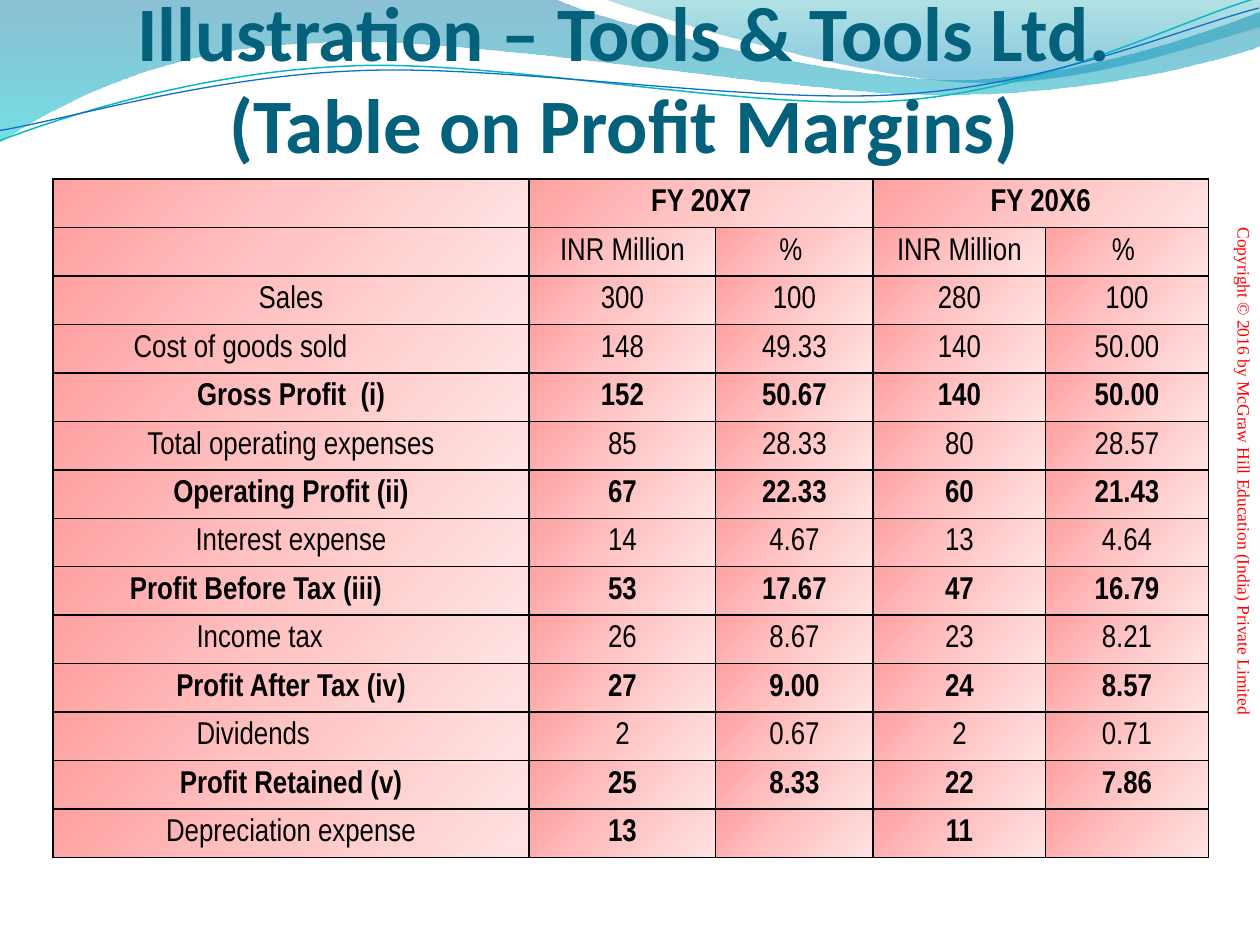
from lxml import etree
from pptx import Presentation
from pptx.dml.color import RGBColor
from pptx.enum.text import MSO_ANCHOR, MSO_AUTO_SIZE, PP_ALIGN
from pptx.oxml.ns import qn
from pptx.util import Inches, Pt

CENTER = PP_ALIGN.CENTER
BOTTOM, MIDDLE = MSO_ANCHOR.BOTTOM, MSO_ANCHOR.MIDDLE
NO_AUTOFIT = MSO_AUTO_SIZE.NONE
COLORS = {
    "title": "04617B", "copyright": "FF0000", "text": "000000",
    "blue": "0074A1", "cyan": "00C6CF", "teal": "00A1A9", "sky": "008BBF",
    "teal line": "0AB8BF", "blue line": "0F6FC6",
    "rose": "FFA0A0", "pink": "FFC5C5", "blush": "FFE3E3",
}


def set_gradient(filled, properties, stops, angle):
    filled.fill.background()
    gradient = etree.Element(qn("a:gradFill"), rotWithShape="1")
    stop_list = etree.SubElement(gradient, qn("a:gsLst"))
    for position, color, opacity in stops:
        stop = etree.SubElement(stop_list, qn("a:gs"), pos=str(position * 1000))
        value = etree.SubElement(stop, qn("a:srgbClr"), val=COLORS[color])
        if opacity < 100:
            etree.SubElement(value, qn("a:alpha"), val=str(opacity * 1000))
    etree.SubElement(gradient, qn("a:lin"), ang=str(angle * 60000), scaled="0")
    properties.replace(properties.find(qn("a:noFill")), gradient)


def add_wave(shapes, start, segments, closed):
    builder = shapes.build_freeform(Inches(start[0]), Inches(start[1]))
    builder.add_line_segments(
        [(Inches(x), Inches(y)) for segment in segments for x, y in segment], close=closed)
    wave = builder.convert_to_shape()
    wave.shadow.inherit = False
    outline = wave.element.find(".//" + qn("a:path"))
    lines = iter(outline.findall(qn("a:lnTo")))
    for segment in segments:
        group = [next(lines) for point in segment]
        if len(group) == 3:
            curve = etree.Element(qn("a:cubicBezTo"))
            group[0].addprevious(curve)
            for line in group:
                curve.append(line[0])
                outline.remove(line)
    return wave


presentation = Presentation()
presentation.slide_width = Inches(10)
presentation.slide_height = Inches(7.5)
slide = presentation.slides.add_slide(presentation.slide_layouts[5])
shapes = slide.shapes

filled_waves = [
    ((0, 0), [
        [(4.4, -0.01)],
        [(4.76, 0.17), (6.64, 0.63), (7.58, 0.63)],
        [(8.53, 0.63), (9.58, 0.26), (10, 0.09)],
        [(10.01, 0.36)],
        [(9.83, 0.44), (8.7, 0.76), (7.46, 0.75)],
        [(6.22, 0.75), (3.82, 0.28), (2.57, 0.34)],
        [(1.29, 0.36), (0.46, 0.83), (-0.01, 1.13)],
        [(0, 0)],
    ], [(0, "blue", 45), (100, "cyan", 55)]),
    ((4.79, -0.01), [
        [(5.09, 0.11), (6.82, 0.62), (7.69, 0.65)],
        [(8.56, 0.69), (9.61, 0.32), (10, 0.21)],
        [(10, 0)],
        [(4.79, -0.01)],
    ], [(0, "teal", 30), (80, "sky", 45)]),
]
for start, segments, stops in filled_waves:
    wave = add_wave(shapes, start, segments, True)
    set_gradient(wave, wave.element.spPr, stops, 90)
    wave.line.fill.background()

line_waves = [
    ((-0.02, 0.88), [
        [(0.47, 0.72), (1.58, 0.41), (2.78, 0.42)],
        [(3.96, 0.42), (5.91, 0.93), (7.12, 0.9)],
        [(8.32, 0.87), (9.4, 0.36), (10, 0.22)],
    ], "teal line", 0.85),
    ((-0.02, 0.8), [
        [(0.46, 0.75), (1.64, 0.45), (2.83, 0.46)],
        [(4.03, 0.46), (5.96, 0.88), (7.16, 0.85)],
        [(8.35, 0.83), (9.42, 0.42), (10.01, 0.3)],
    ], "blue line", 0.75),
]
for start, segments, color, width in line_waves:
    wave = add_wave(shapes, start, segments, False)
    wave.rotation = 357.3
    wave.fill.background()
    wave.line.color.rgb = RGBColor.from_string(COLORS[color])
    wave.line.width = Pt(width)

copyright_box = shapes.add_textbox(Inches(6.83), Inches(3.49), Inches(6.33), Inches(0.5))
copyright_box.rotation = 90
copyright_frame = copyright_box.text_frame
copyright_frame.word_wrap = True
copyright_frame.vertical_anchor = BOTTOM
copyright_frame.text = "Copyright © 2016 by McGraw Hill Education (India) Private Limited"
paragraph = copyright_frame.paragraphs[0]
paragraph.alignment = CENTER
paragraph.font.name = "Times New Roman"
paragraph.font.size = Pt(10)
paragraph.font.color.rgb = RGBColor.from_string(COLORS["copyright"])

title = shapes.title
title.element.getparent().append(title.element)
title.left, title.top = Inches(0.58), Inches(0.17)
title.width, title.height = Inches(8.75), Inches(1.17)
title_frame = title.text_frame
title_frame.word_wrap = True
title_frame.auto_size = NO_AUTOFIT
title_frame.vertical_anchor = BOTTOM
title_frame.margin_left = title_frame.margin_right = title_frame.margin_bottom = 0
paragraph = title_frame.paragraphs[0]
paragraph.add_run().text = "Illustration – Tools & Tools Ltd."
paragraph.add_line_break()
paragraph.add_run().text = "(Table on Profit Margins)"
paragraph.alignment = CENTER
paragraph.font.name = "Calibri"
paragraph.font.size = Pt(44)
paragraph.font.bold = True
paragraph.font.color.rgb = RGBColor.from_string(COLORS["title"])

rows = [
    ("", "FY 20X7", "", "FY 20X6", ""),
    ("", "INR Million", "% ", "INR Million", "% "),
    ("Sales", "300", "100", "280", "100"),
    ("Cost of goods sold\t", "148", "49.33", "140", "50.00"),
    ("Gross Profit  (i)", "152", "50.67", "140", "50.00"),
    ("Total operating expenses", "85", "28.33", "80", "28.57"),
    ("Operating Profit (ii)", "67", "22.33", "60", "21.43"),
    ("Interest expense", "14", "4.67", "13", "4.64"),
    ("Profit Before Tax (iii)\t ", "53", "17.67", "47", "16.79"),
    ("Income tax\t", "26", "8.67", "23", "8.21"),
    ("Profit After Tax (iv)", "27", "9.00", "24", "8.57"),
    ("Dividends\t", "2", "0.67", "2", "0.71"),
    ("Profit Retained (v)", "25", "8.33", "22", "7.86"),
    ("Depreciation expense", "13", "", "11", ""),
]
column_widths = [3.78, 1.48, 1.25, 1.37, 1.29]
table = shapes.add_table(len(rows), len(column_widths), Inches(0.42), Inches(1.42),
                         Inches(sum(column_widths)), Inches(5.39)).table
table.first_row = table.horz_banding = False
for column, width in zip(table.columns, column_widths):
    column.width = Inches(width)
for first in (1, 3):
    table.cell(0, first).merge(table.cell(0, first + 1))

for row_index, row in enumerate(rows):
    for column_index, text in enumerate(row):
        cell = table.cell(row_index, column_index)
        cell.vertical_anchor = MIDDLE
        cell.margin_top = cell.margin_bottom = Inches(0.04)
        cell_properties = cell._tc.get_or_add_tcPr()
        for side in ("a:lnL", "a:lnR", "a:lnT", "a:lnB"):
            border = etree.SubElement(cell_properties, qn(side), w=str(Pt(1)))
            border_fill = etree.SubElement(border, qn("a:solidFill"))
            etree.SubElement(border_fill, qn("a:srgbClr"), val=COLORS["text"])
        set_gradient(cell, cell_properties,
                     [(0, "rose", 100), (50, "pink", 100), (100, "blush", 100)], 45)
        if not text:
            continue
        cell.text = text
        paragraph = cell.text_frame.paragraphs[0]
        paragraph.alignment = CENTER
        paragraph.line_spacing = 0.95
        paragraph_properties = paragraph._p.get_or_add_pPr()
        paragraph_properties.set("marL", str(Inches(0.5)))
        paragraph_properties.set("indent", str(Inches(-0.5)))
        paragraph_properties.set("defTabSz", str(Inches(1)))
        tabs = etree.SubElement(paragraph_properties, qn("a:tabLst"))
        etree.SubElement(tabs, qn("a:tab"), pos=str(Inches(-0.5)), algn="l")
        paragraph.font.name = "Arial Narrow"
        paragraph.font.size = Pt(18)
        paragraph.font.bold = (row_index == 0 or "(" in row[0]
                               or (row_index == len(rows) - 1 and column_index > 0))
        paragraph.font.color.rgb = RGBColor.from_string(COLORS["text"])

presentation.save("out.pptx")
